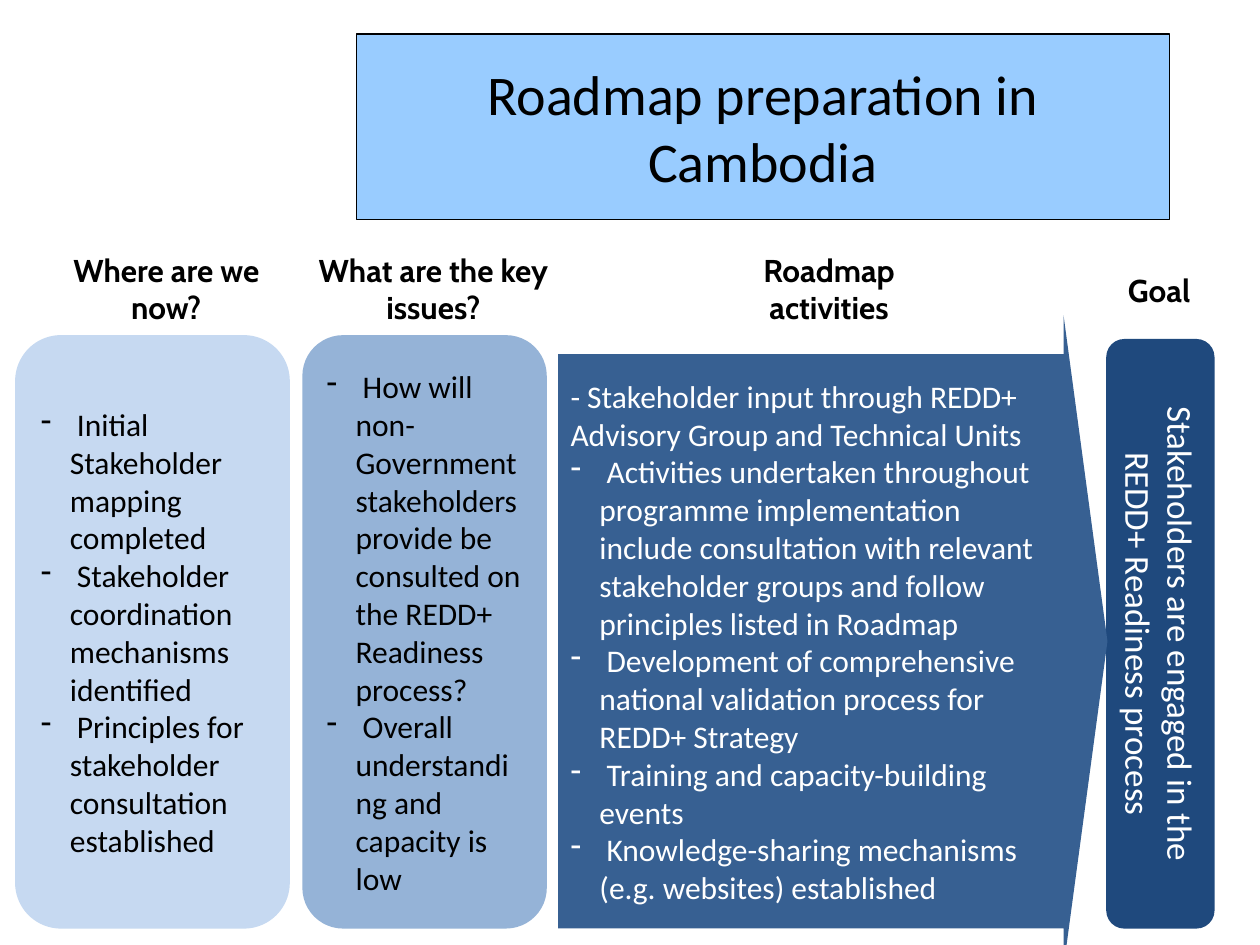
import pptx
import pptx.util
import pptx.dml.color
import pptx.enum.shapes
import pptx.enum.text
import pptx.oxml.ns
from lxml import etree

Inches = pptx.util.Inches
Pt = pptx.util.Pt
RGB = pptx.dml.color.RGBColor.from_string
SHAPE = pptx.enum.shapes.MSO_SHAPE
ALIGN = pptx.enum.text.PP_ALIGN
ANCHOR = pptx.enum.text.MSO_ANCHOR

THEME = {
    "body_font": "Calibri", "head_font": "Cabin",
    "title_size": 32, "goal_size": 20, "body_size": 18,
    "dark": "000000", "light": "FFFFFF",
    "title": "99CCFF", "now": "C6D9F1", "issues": "95B3D7",
    "activities": "376092", "goal": "1F497D",
}


def add_panel(kind, box, fill):
    sp = s.shapes.add_shape(kind, *[Inches(v) for v in box])
    sp.shadow.inherit = False
    sp.fill.solid()
    sp.fill.fore_color.rgb = RGB(THEME[fill])
    sp.line.fill.background()
    sp.text_frame.word_wrap = True
    sp.text_frame.vertical_anchor = ANCHOR.MIDDLE
    return sp


def write(tf, lines, size, color, font="body_font", align=ALIGN.CENTER, bold=False, plain=0):
    for i, line in enumerate(lines):
        p = tf.paragraphs[0] if i == 0 else tf.add_paragraph()
        p.alignment = align
        if align == ALIGN.LEFT and i >= plain:
            pPr = p._p.get_or_add_pPr()
            pPr.set("marL", str(Inches(0.23)))
            pPr.set("indent", str(-Inches(0.23)))
            etree.SubElement(pPr, pptx.oxml.ns.qn("a:buChar")).set("char", "-")
        r = p.add_run()
        r.text = line
        r.font.name = THEME[font]
        r.font.size = Pt(THEME[size])
        r.font.color.rgb = RGB(THEME[color])
        r.font.bold = bold


prs = pptx.Presentation()
prs.slide_width = Inches(10)
prs.slide_height = Inches(7.5)
s = prs.slides.add_slide(prs.slide_layouts[6])

title = add_panel(SHAPE.RECTANGLE, (2.83, 0.27, 6.45, 1.47), "title")
title.line.color.rgb = RGB(THEME["dark"])
title.line.width = Pt(0.75)
write(title.text_frame, ["Roadmap preparation in Cambodia"], "title_size", "dark")

goal = add_panel(SHAPE.ROUNDED_RECTANGLE, (8.78, 2.69, 0.86, 4.68), "goal")
goal.text_frame._txBody.bodyPr.set("vert", "vert")
write(goal.text_frame, ["Stakeholders are engaged in the REDD+ Readiness process"],
      "goal_size", "light")

arrow = add_panel(SHAPE.RIGHT_ARROW, (4.43, 2.5, 4.36, 5.18), "activities")
arrow.adjustments[0] = 0.88
arrow.adjustments[1] = 0.08
write(arrow.text_frame, [
    "- Stakeholder input through REDD+ Advisory Group and Technical Units",
    " Activities undertaken throughout programme implementation include consultation "
    "with relevant stakeholder groups and follow principles listed in Roadmap",
    " Development of comprehensive national validation process for REDD+ Strategy",
    " Training and capacity-building events",
    " Knowledge-sharing mechanisms (e.g. websites) established",
], "body_size", "light", align=ALIGN.LEFT, plain=1)

columns = [
    (2.4, 1.94, "issues", [
        " How will non-Government stakeholders provide be consulted on the REDD+ "
        "Readiness process?",
        " Overall understanding and capacity is low",
    ]),
    (0.12, 2.18, "now", [
        " Initial Stakeholder mapping completed",
        " Stakeholder coordination mechanisms identified",
        " Principles for stakeholder consultation established",
    ]),
]
for left, width, fill, lines in columns:
    sp = add_panel(SHAPE.ROUNDED_RECTANGLE, (left, 2.66, width, 4.71), fill)
    write(sp.text_frame, lines, "body_size", "dark", align=ALIGN.LEFT)

headings = [
    ("What are the key issues?", 2.34, 1.94, 2.2, 0.71),
    ("Roadmap activities", 5.48, 1.94, 2.2, 0.71),
    ("Goal", 8.1, 2.1, 2.2, 0.4),
    ("Where are we now?", 0.26, 1.94, 2.12, 0.71),
]
for text, *box in headings:
    tf = s.shapes.add_textbox(*[Inches(v) for v in box]).text_frame
    tf.word_wrap = True
    tf.auto_size = pptx.enum.text.MSO_AUTO_SIZE.SHAPE_TO_FIT_TEXT
    write(tf, [text], "body_size", "dark", font="head_font", bold=True)

prs.save("out.pptx")
